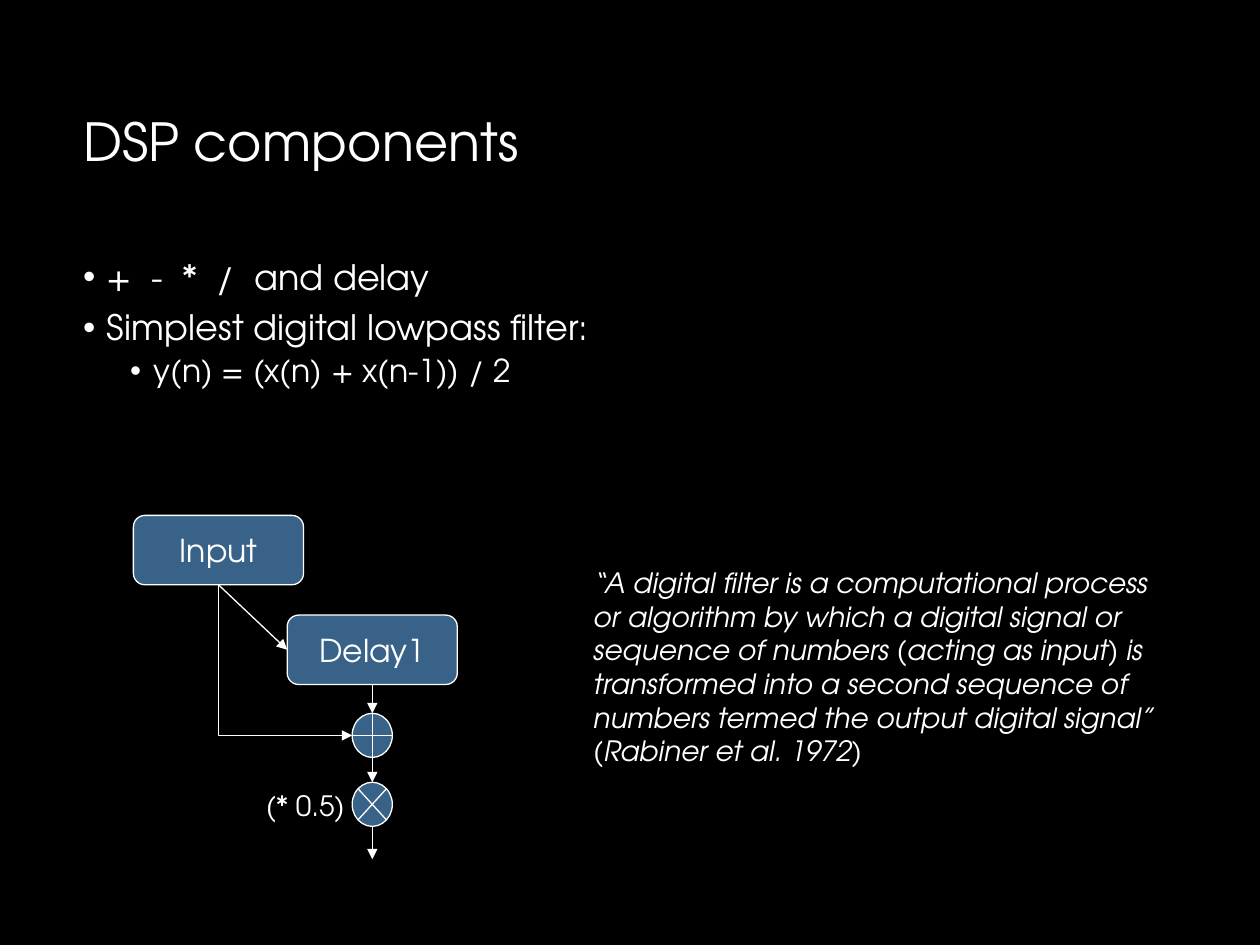
from pptx import Presentation
from pptx.dml.color import RGBColor
from pptx.enum.shapes import MSO_CONNECTOR as Connector, MSO_SHAPE as Shape
from pptx.enum.text import MSO_ANCHOR as Anchor, MSO_AUTO_SIZE as AutoSize, PP_ALIGN as Align
from pptx.oxml.ns import qn
from pptx.oxml.xmlchemy import OxmlElement
from pptx.util import Cm, Pt

FONT = "TeX Gyre Adventor"
WHITE, BLUE, BLACK = "FFFFFF", "386288", "000000"
QUOTE = (
    "“A digital filter is a computational process or algorithm by which a digital "
    "signal or sequence of numbers (acting as input) is transformed into a second "
    "sequence of numbers termed the output digital signal” (Rabiner et al. 1972)"
)


def color(value):
    return RGBColor.from_string(value)


def format_runs(paragraph, size, italic=None):
    for run in paragraph.runs:
        run.font.name = FONT
        run.font.size = Pt(size)
        run.font.italic = italic
        run.font.color.rgb = color(WHITE)


def place(shape, left, top, width, height):
    shape.left, shape.top = Cm(left), Cm(top)
    shape.width, shape.height = Cm(width), Cm(height)


def add_bullet(paragraph, margin):
    properties = paragraph._p.get_or_add_pPr()
    properties.set("marL", str(Cm(margin)))
    properties.set("indent", str(-Cm(0.48)))
    for tag, key, value in (("a:buFont", "typeface", "Arial"), ("a:buChar", "char", "•")):
        element = OxmlElement(tag)
        element.set(key, value)
        properties.append(element)


def add_title(slide, left, top, width, height):
    title = slide.shapes.title
    place(title, left, top, width, height)
    frame = title.text_frame
    frame.text = "DSP components"
    frame.auto_size = AutoSize.NONE
    frame.vertical_anchor = Anchor.MIDDLE
    paragraph = frame.paragraphs[0]
    paragraph.alignment = Align.LEFT
    paragraph.line_spacing = 0.9
    format_runs(paragraph, 30)


def add_list(slide, left, top, width, height):
    body = slide.placeholders[1]
    place(body, left, top, width, height)
    frame = body.text_frame
    frame.auto_size = AutoSize.NONE
    # Runs, level, left margin, size, space before
    items = [
        (("+ - * / ", "and delay"), 0, 0.48, 20, 0),
        (("Simplest digital lowpass filter:",), 0, 0.48, 20, 7.5),
        (("y(n) = (x(n) + x(n-1)) / 2",), 1, 1.43, 18, 3.8),
    ]
    for index, (texts, level, margin, size, space) in enumerate(items):
        paragraph = frame.add_paragraph() if index else frame.paragraphs[0]
        for text in texts:
            paragraph.add_run().text = text
        paragraph.level = level
        add_bullet(paragraph, margin)
        paragraph.line_spacing = 0.9
        paragraph.space_before = Pt(space)
        format_runs(paragraph, size)
    # Wider letter spacing sets the operators apart
    operators = frame.paragraphs[0].runs[0]
    operators.font._element.set("spc", "275")


def add_text(slide, text, left, top, width, height, italic=None):
    box = slide.shapes.add_textbox(Cm(left), Cm(top), Cm(width), Cm(height))
    frame = box.text_frame
    frame.word_wrap = True
    frame.text = text
    format_runs(frame.paragraphs[0], 16, italic)


def add_node(slide, kind, left, top, width, height, text=None):
    node = slide.shapes.add_shape(kind, Cm(left), Cm(top), Cm(width), Cm(height))
    node.shadow.inherit = False
    node.fill.solid()
    node.fill.fore_color.rgb = color(BLUE)
    node.line.color.rgb = color(WHITE)
    node.line.width = Pt(0.75)
    if text:
        frame = node.text_frame
        frame.text = text
        frame.word_wrap = False
        frame.vertical_anchor = Anchor.MIDDLE
        frame.paragraphs[0].alignment = Align.CENTER
        format_runs(frame.paragraphs[0], 18)
    return node


def add_arrow(slide, begin_x, begin_y, end_x, end_y, kind=Connector.STRAIGHT):
    arrow = slide.shapes.add_connector(kind, begin_x, begin_y, end_x, end_y)
    arrow.line.color.rgb = color(WHITE)
    arrow.line.width = Pt(0.75)
    tail = OxmlElement("a:tailEnd")
    tail.set("type", "triangle")
    arrow.line._get_or_add_ln().append(tail)
    arrow._element.spPr.append(OxmlElement("a:effectLst"))
    return arrow


def add_corner_arrow(slide, begin_x, begin_y, end_x, end_y):
    """Arrow that runs down, then right: a mirrored elbow turned by 270 degrees."""
    middle_x, middle_y = (begin_x + end_x) // 2, (begin_y + end_y) // 2
    half_width, half_height = (end_y - begin_y) // 2, (end_x - begin_x) // 2
    arrow = add_arrow(slide, middle_x + half_width, middle_y - half_height,
                      middle_x - half_width, middle_y + half_height, Connector.ELBOW)
    properties = arrow._element.spPr
    properties.find(qn("a:xfrm")).set("rot", str(270 * 60000))
    properties.find(qn("a:prstGeom")).set("prst", "bentConnector2")


def add_diagram(slide, left, top):
    box_width, box_height = 3.43, 1.4
    circle_width, circle_height = 0.81, 0.89
    delay_left = left + 3.1
    circle_left = delay_left + (box_width - circle_width) / 2

    # Nodes
    source = add_node(slide, Shape.ROUNDED_RECTANGLE, left, top,
                      box_width, box_height, "Input")
    delay = add_node(slide, Shape.ROUNDED_RECTANGLE, delay_left, top + 2.01,
                     box_width, box_height, "Delay1")
    adder, multiplier = [
        add_node(slide, kind, circle_left, top + offset, circle_width, circle_height)
        for kind, offset in ((Shape.FLOWCHART_OR, 3.99),
                             (Shape.FLOWCHART_SUMMING_JUNCTION, 5.38))
    ]
    add_text(slide, "(* 0.5)", left + 2.42, top + 5.38, 2.41, 0.94)

    # Signal paths
    source_x = source.left + source.width // 2
    source_bottom = source.top + source.height
    diagonal = add_arrow(slide, source_x, source_bottom,
                         delay.left, delay.top + delay.height // 2)
    diagonal.begin_connect(source, 2)
    diagonal.end_connect(delay, 1)
    add_corner_arrow(slide, source_x, source_bottom,
                     adder.left, adder.top + adder.height // 2)

    center_x = delay.left + delay.width // 2
    ends = [adder.top, multiplier.top, Cm(top + 6.93)]
    for node, end_y in zip((delay, adder, multiplier), ends):
        arrow = add_arrow(slide, center_x, node.top + node.height, center_x, end_y)
        if node is delay:
            arrow.begin_connect(delay, 2)


def main():
    presentation = Presentation()
    presentation.slide_width, presentation.slide_height = Cm(25.4), Cm(19.05)
    slide = presentation.slides.add_slide(presentation.slide_layouts[1])
    slide.background.fill.solid()
    slide.background.fill.fore_color.rgb = color(BLACK)

    add_title(slide, 1.42, 1.12, 22.56, 3.58)
    add_list(slide, 1.42, 5.11, 22.56, 11.18)
    add_diagram(slide, 2.69, 10.39)
    add_text(slide, QUOTE, 11.71, 11.28, 11.96, 5.05, italic=True)
    presentation.save("out.pptx")


if __name__ == "__main__":
    main()
